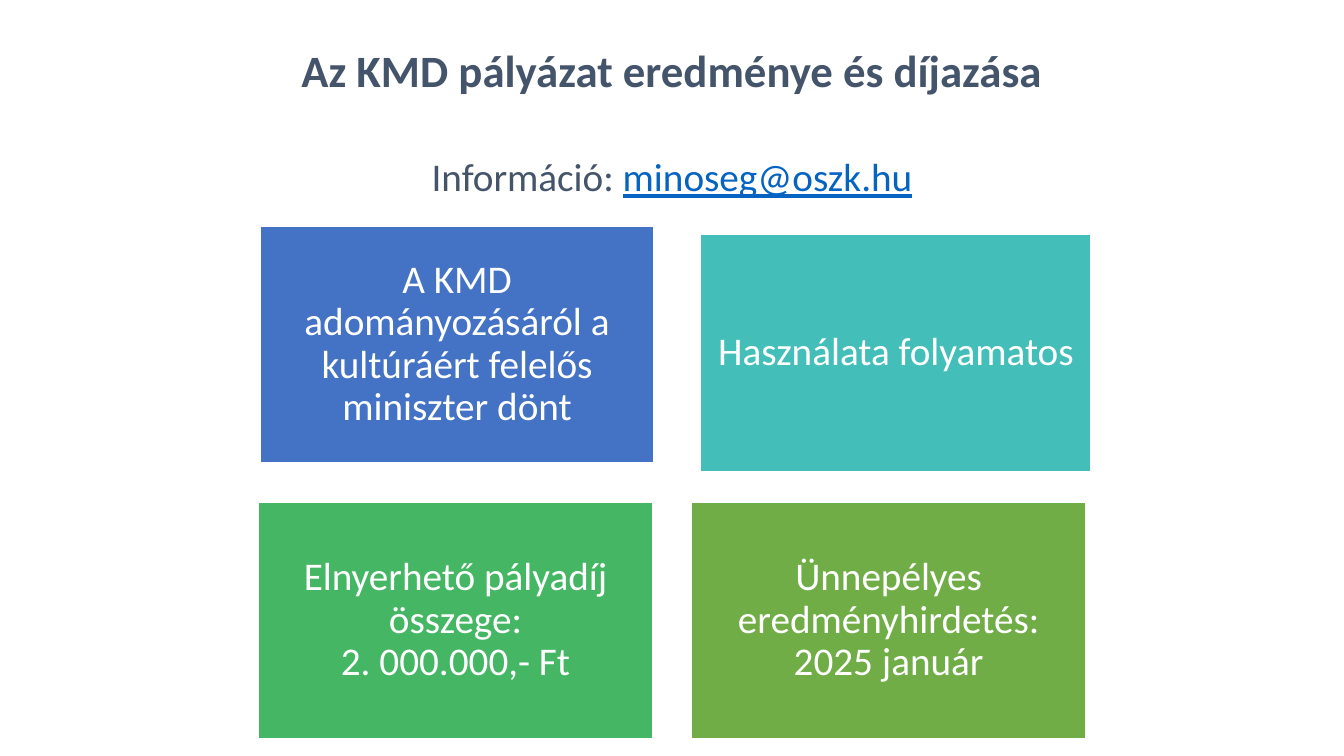
"""Build the slide on the result and prize of the KMD award."""
from dataclasses import dataclass

from pptx import Presentation
from pptx.dml.color import RGBColor
from pptx.enum import shapes, text
from pptx.slide import Slide
from pptx.text.text import TextFrame
from pptx.util import Pt

WHITE = RGBColor(0xFF, 0xFF, 0xFF)
SLATE = RGBColor(0x44, 0x54, 0x6A)
LINK_BLUE = RGBColor(0x05, 0x63, 0xC1)
BLUE = RGBColor(0x44, 0x72, 0xC4)
TEAL = RGBColor(0x43, 0xBE, 0xB9)
GREEN = RGBColor(0x45, 0xB6, 0x64)
OLIVE = RGBColor(0x70, 0xAD, 0x47)

FONT = "Calibri"
MARGIN_LEFT, CONTENT_WIDTH = 66, 828
CARD_HEIGHT = 169.2


@dataclass(frozen=True)
class Card:
    left: float
    top: float
    width: float
    fill: RGBColor
    label: str


CARDS = (
    Card(185.7, 161.3, 281.5, BLUE, "A KMD adományozásáról a kultúráért felelős miniszter dönt"),
    Card(500.4, 167.4, 279.0, TEAL, "Használata folyamatos"),
    Card(184.6, 358.6, 281.5, GREEN, "Elnyerhető pályadíj összege:\n2. 000.000,- Ft"),
    Card(494.0, 358.6, 281.5, OLIVE, "Ünnepélyes eredményhirdetés: 2025 január"),
)


def write_text(frame: TextFrame, content: str, *, size: float = 28,
               color: RGBColor = WHITE, bold: bool = False, underline: bool = False,
               anchor: text.MSO_ANCHOR = text.MSO_ANCHOR.MIDDLE) -> None:
    frame.word_wrap = True
    frame.auto_size = text.MSO_AUTO_SIZE.NONE
    frame.vertical_anchor = anchor
    paragraph = frame.paragraphs[0]
    paragraph.alignment = text.PP_ALIGN.CENTER
    paragraph.line_spacing = 0.9
    for index, line in enumerate(content.split("\n")):
        if index:
            paragraph.add_line_break()
        run = paragraph.add_run()
        run.text = line
        run.font.name = FONT
        run.font.size = Pt(size)
        run.font.bold = bold
        run.font.underline = underline
        run.font.color.rgb = color


def add_title(slide: Slide) -> None:
    title = slide.shapes.title
    title.left, title.top = Pt(MARGIN_LEFT), Pt(23)
    title.width, title.height = Pt(CONTENT_WIDTH), Pt(59)
    write_text(title.text_frame, "Az KMD pályázat eredménye és díjazása",
               size=32, color=SLATE, bold=True)


def add_contact(slide: Slide) -> None:
    box = slide.shapes.add_textbox(Pt(MARGIN_LEFT), Pt(109.4), Pt(CONTENT_WIDTH), Pt(42))
    top = text.MSO_ANCHOR.TOP
    write_text(box.text_frame, "Információ: ", color=SLATE, anchor=top)
    write_text(box.text_frame, "minoseg@oszk.hu", color=LINK_BLUE, underline=True, anchor=top)


def add_card(slide: Slide, card: Card) -> None:
    shape = slide.shapes.add_shape(shapes.MSO_SHAPE.RECTANGLE, Pt(card.left), Pt(card.top),
                                   Pt(card.width), Pt(CARD_HEIGHT))
    shape.shadow.inherit = False
    shape.fill.solid()
    shape.fill.fore_color.rgb = card.fill
    shape.line.color.rgb = WHITE
    shape.line.width = Pt(1)
    frame = shape.text_frame
    frame.margin_left = frame.margin_right = Pt(8.4)
    frame.margin_top = frame.margin_bottom = Pt(8.4)
    write_text(frame, card.label)


def main() -> None:
    presentation = Presentation()
    presentation.slide_width, presentation.slide_height = Pt(960), Pt(540)
    slide = presentation.slides.add_slide(presentation.slide_layouts.get_by_name("Title Only"))
    add_title(slide)
    add_contact(slide)
    for card in CARDS:
        add_card(slide, card)
    presentation.save("out.pptx")


if __name__ == "__main__":
    main()
